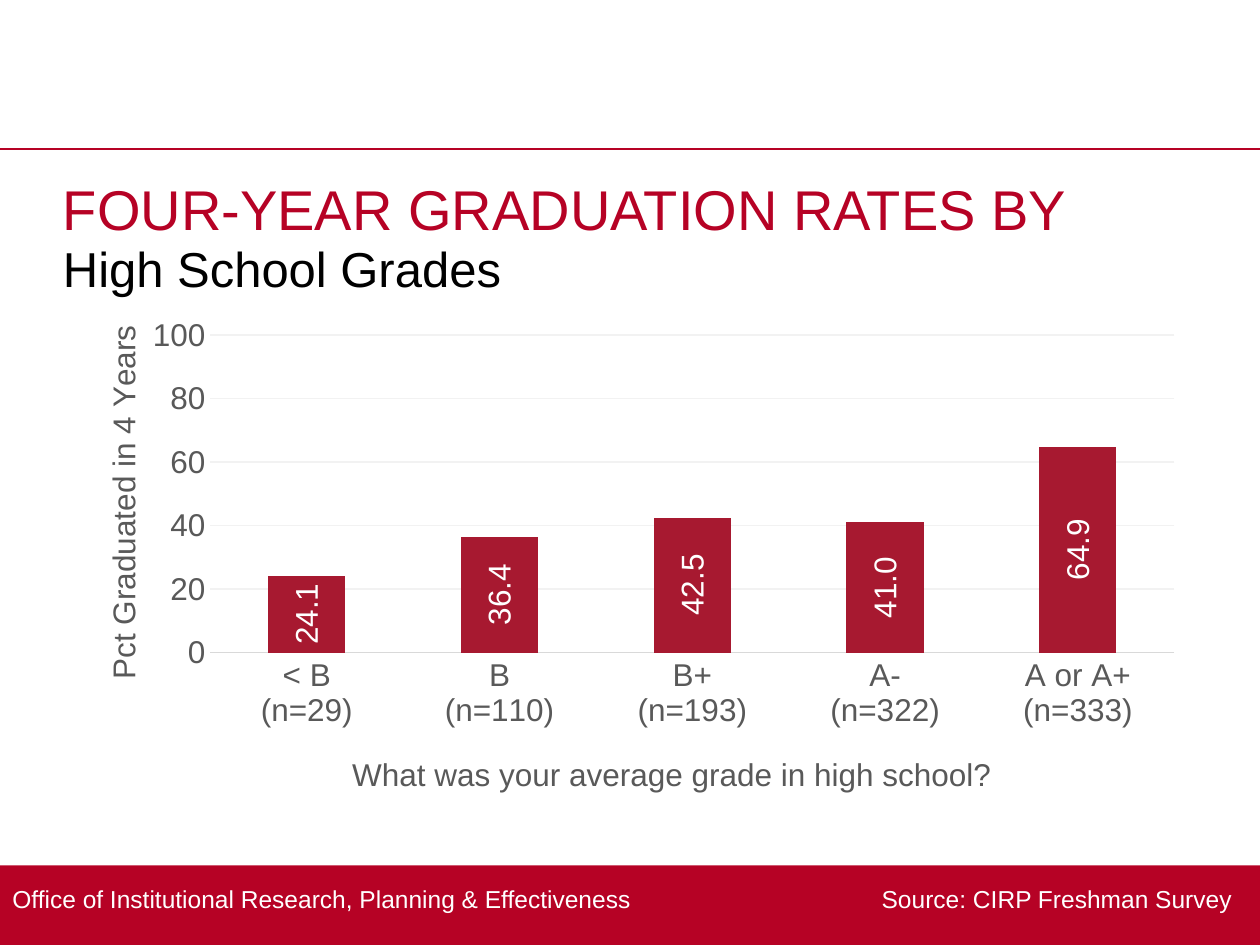
"""Build the slide on four-year graduation rates by high school grades."""
from dataclasses import dataclass

from lxml.etree import SubElement
from pptx import Presentation
from pptx.chart.data import CategoryChartData
from pptx.dml.color import RGBColor
from pptx.enum.chart import XL_CHART_TYPE as ChartType
from pptx.enum.chart import XL_LABEL_POSITION as LabelPosition
from pptx.enum.chart import XL_TICK_MARK as TickMark
from pptx.enum.shapes import MSO_CONNECTOR as Connector
from pptx.enum.shapes import MSO_SHAPE as Shape
from pptx.enum.text import MSO_ANCHOR as Anchor
from pptx.oxml.ns import qn
from pptx.util import Pt


@dataclass(frozen=True)
class Theme:
    font: str = "Arial"
    crimson: str = "B60225"
    bar: str = "A71930"
    white: str = "FFFFFF"
    black: str = "000000"
    axis_text: str = "595959"
    axis_line: str = "D9D9D9"
    grid: str = "F2F2F2"
    title_size: int = 32
    subtitle_size: int = 28
    chart_size: int = 18
    footer_size: int = 14


THEME = Theme()


def set_font(font, size, color):
    for name, value in {"name": THEME.font, "size": Pt(size), "bold": False}.items():
        setattr(font, name, value)
    font.color.rgb = RGBColor.from_string(color)


def place(layout, **fractions):
    manual = SubElement(layout, qn("c:manualLayout"))
    for tag, value in fractions.items():
        SubElement(manual, qn(f"c:{tag}")).set("val", str(value))


prs = Presentation()
prs.slide_width, prs.slide_height = Pt(720), Pt(540)
slide = prs.slides.add_slide(prs.slide_layouts[6])
shapes = slide.shapes

band = shapes.add_shape(Shape.RECTANGLE, Pt(0), Pt(494.6), Pt(720), Pt(45.4))
band.shadow.inherit = False
band.fill.solid()
band.fill.fore_color.rgb = RGBColor.from_string(THEME.crimson)
band.line.fill.background()

rule = shapes.add_connector(Connector.STRAIGHT, Pt(0), Pt(85.2), Pt(720), Pt(85.2))
rule.line.color.rgb = RGBColor.from_string(THEME.crimson)
rule.line.width = Pt(1)
SubElement(rule.element.spPr, qn("a:effectLst"))

footer = "Office of Institutional Research, Planning & Effectiveness\tSource: CIRP Freshman Survey"
texts = [
    (footer, (0, 495.4, 720, 36.7), (7.2, 3.6), Anchor.MIDDLE, THEME.footer_size, THEME.white),
    ("High School Grades", (36, 133.2, 648, 32.4), (0, 3), Anchor.TOP,
     THEME.subtitle_size, THEME.black),
    ("FOUR-YEAR GRADUATION RATES BY", (36, 92.9, 648, 62.6), (0, 7), Anchor.TOP,
     THEME.title_size, THEME.crimson),
]
for text, bounds, (side, top), anchor, size, color in texts:
    frame = shapes.add_textbox(*map(Pt, bounds)).text_frame
    margins = {"margin_left": side, "margin_right": side, "margin_top": top, "margin_bottom": 3.6}
    for name, value in margins.items():
        setattr(frame, name, Pt(value))
    frame.word_wrap = True
    frame.vertical_anchor = anchor
    paragraph = frame.paragraphs[0]
    if "\t" in text:
        tabs = SubElement(paragraph._p.get_or_add_pPr(), qn("a:tabLst"))
        SubElement(tabs, qn("a:tab"), pos=str(Pt(697)), algn="r")
    paragraph.text = text
    set_font(paragraph.font, size, color)

rates = {
    "< B\n(n=29)": 24.1,
    "B\n(n=110)": 36.4,
    "B+\n(n=193)": 42.5,
    "A-\n(n=322)": 41,
    "A or A+\n(n=333)": 64.9,
}
data = CategoryChartData()
data.categories = list(rates)
data.add_series("Series 1", list(rates.values()))
chart = shapes.add_chart(
    ChartType.COLUMN_CLUSTERED, Pt(36), Pt(177.1), Pt(648), Pt(288), data).chart
chart.has_legend = False
chart.has_title = False
set_font(chart.font, THEME.chart_size, THEME.black)

plot = chart.plots[0]
for name, value in {"gap_width": 150, "overlap": -27, "vary_by_categories": False}.items():
    setattr(plot, name, value)
bars = plot.series[0].format.fill
bars.solid()
bars.fore_color.rgb = RGBColor.from_string(THEME.bar)

plot.has_data_labels = True
labels = plot.data_labels
label_format = {"show_value": True, "position": LabelPosition.CENTER,
                "number_format": "#,##0.0", "number_format_is_linked": False}
for name, value in label_format.items():
    setattr(labels, name, value)
set_font(labels.font, THEME.chart_size, THEME.white)

grades, percent = chart.category_axis, chart.value_axis
axis_titles = [
    (grades, "What was your average grade in high school?", 0.25, 0.87),
    (percent, "Pct Graduated in 4 Years", 0.03, 0.02),
]
for axis, text, x, y in axis_titles:
    axis.major_tick_mark = axis.minor_tick_mark = TickMark.NONE
    set_font(axis.tick_labels.font, THEME.chart_size, THEME.axis_text)
    heading = axis.axis_title
    heading.text_frame.text = text
    set_font(heading.text_frame.paragraphs[0].runs[0].font, THEME.chart_size, THEME.axis_text)
    place(heading._element.get_or_add_layout() if hasattr(heading._element, "get_or_add_layout")
          else heading._element.find(qn("c:layout")), xMode="edge", yMode="edge", x=x, y=y)

for name, value in {"minimum_scale": 0, "maximum_scale": 100, "major_unit": 20}.items():
    setattr(percent, name, value)
percent.format.line.fill.background()
for line, color in ((grades.format.line, THEME.axis_line),
                    (percent.major_gridlines.format.line, THEME.grid)):
    line.color.rgb = RGBColor.from_string(color)
    line.width = Pt(0.75)

for turned in (labels._element, percent.axis_title._element):
    body = next(turned.iter(qn("a:bodyPr")))
    body.set("rot", "-5400000")
    body.set("vert", "horz")

plot_area = chart._chartSpace.chart.plotArea
layout = plot_area.find(qn("c:layout"))
if layout is None:
    layout = SubElement(plot_area, qn("c:layout"))
    plot_area.insert(0, layout)
place(layout, layoutTarget="inner", xMode="edge", yMode="edge", x=0.13, y=0.05, w=0.85, h=0.63)

prs.save("out.pptx")
